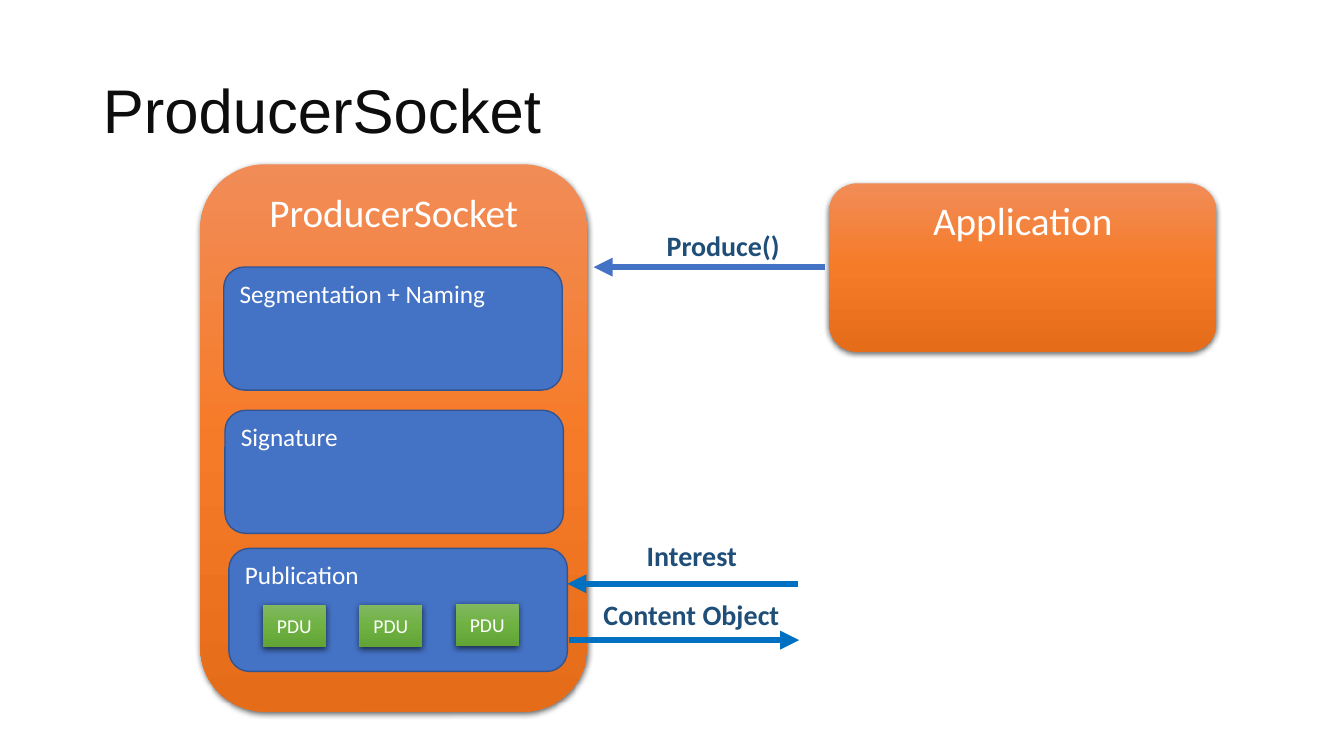
from lxml.etree import SubElement as Sub
from pptx import Presentation
from pptx.dml.color import RGBColor as RGB
from pptx.enum.shapes import MSO_CONNECTOR as LINK, MSO_SHAPE as SHAPE
from pptx.enum.text import MSO_ANCHOR as ANCHOR, MSO_AUTO_SIZE as FIT, PP_ALIGN as ALIGN
from pptx.oxml.ns import qn
from pptx.util import Cm, Pt

WHITE = RGB(0xFF, 0xFF, 0xFF)
INK = RGB(0x0D, 0x0D, 0x0D)
NAVY = RGB(0x1F, 0x4E, 0x79)
BLUE = RGB(0x44, 0x72, 0xC4)
EDGE = RGB(0x32, 0x54, 0x91)
SKY = RGB(0x00, 0x70, 0xC0)
BLACK = RGB(0x00, 0x00, 0x00)
ORANGE = (RGB(0xF1, 0x8C, 0x57), RGB(0xF6, 0x7B, 0x28), RGB(0xE5, 0x6C, 0x19))
GREEN = (RGB(0x81, 0xB8, 0x61), RGB(0x6F, 0xB2, 0x42), RGB(0x62, 0xA3, 0x36))


def write(frame, text, size, color, align=ALIGN.CENTER, bold=False, face="Calibri"):
    para = frame.paragraphs[0]
    para.alignment = align
    run = para.add_run()
    run.text = text
    font = run.font
    font.name, font.size, font.bold = face, Pt(size), bold
    font.color.rgb = color
    return para


def add_title(slide, text):
    title = slide.shapes.title
    title.left, title.top, title.width, title.height = Cm(2.34), Cm(1.02), Cm(26.29), Cm(3.68)
    frame = title.text_frame
    frame.auto_size = FIT.NONE
    frame.vertical_anchor = ANCHOR.MIDDLE
    write(frame, text, 44, INK, ALIGN.LEFT, face="Arial").line_spacing = 0.9


def add_box(slide, kind, x, y, wide, high, text, size, align, anchor):
    box = slide.shapes.add_shape(kind, Cm(x), Cm(y), Cm(wide), Cm(high))
    box.shadow.inherit = False
    frame = box.text_frame
    frame.word_wrap = True
    frame.vertical_anchor = anchor
    write(frame, text, size, WHITE, align)
    return box


def add_glow(box, tints):
    box.line.fill.background()
    box.fill.gradient()
    grad = box._element.spPr.find(qn("a:gradFill"))
    for child in list(grad):
        grad.remove(child)
    stops = Sub(grad, qn("a:gsLst"))
    for i, tint in enumerate(tints):
        stop = Sub(stops, qn("a:gs"), pos=str(i * 50000))
        Sub(stop, qn("a:srgbClr"), val=str(tint))
    Sub(grad, qn("a:lin"), ang="5400000", scaled="0")
    effect = box._element.spPr.find(qn("a:effectLst"))
    shade = Sub(effect, qn("a:outerShdw"), blurRad=str(Pt(4.5)), dist=str(Pt(1.5)),
                dir="5400000", algn="ctr", rotWithShape="0")
    tone = Sub(shade, qn("a:srgbClr"), val=str(BLACK))
    Sub(tone, qn("a:alpha"), val="63000")


def add_block(slide, x, y, high, text):
    box = add_box(slide, SHAPE.ROUNDED_RECTANGLE, x, y, 9.75, high, text, 28,
                  ALIGN.CENTER, ANCHOR.TOP)
    add_glow(box, ORANGE)


def add_stage(slide, x, y, text):
    box = add_box(slide, SHAPE.ROUNDED_RECTANGLE, x, y, 8.53, 3.1, text, 18,
                  ALIGN.LEFT, ANCHOR.TOP)
    box.fill.solid()
    box.fill.fore_color.rgb = BLUE
    box.line.color.rgb = EDGE
    box.line.width = Pt(1)


def add_unit(slide, x, y):
    box = add_box(slide, SHAPE.RECTANGLE, x, y, 1.58, 1.07, "PDU", 14,
                  ALIGN.CENTER, ANCHOR.MIDDLE)
    add_glow(box, GREEN)


def add_arrow(slide, start, end, y, color):
    link = slide.shapes.add_connector(LINK.STRAIGHT, Cm(start), Cm(y), Cm(end), Cm(y))
    link.line.color.rgb = color
    link.line.width = Pt(4.5)
    Sub(link.line._get_or_add_ln(), qn("a:tailEnd"), type="triangle")
    Sub(link._element.spPr, qn("a:effectLst"))


def add_label(slide, x, y, wide, text):
    box = slide.shapes.add_textbox(Cm(x), Cm(y), Cm(wide), Cm(1.11))
    frame = box.text_frame
    frame.word_wrap = True
    frame.auto_size = FIT.SHAPE_TO_FIT_TEXT
    write(frame, text, 20, NAVY, bold=True)


def main():
    deck = Presentation()
    deck.slide_width, deck.slide_height = Cm(33.87), Cm(19.05)
    slide = deck.slides.add_slide(deck.slide_layouts[5])
    add_title(slide, "ProducerSocket")

    add_block(slide, 20.9, 4.62, 4.24, "Application")
    add_block(slide, 5.05, 4.14, 13.79, "ProducerSocket")

    for x, y, text in (
        (5.64, 6.73, "Segmentation + Naming"),
        (5.67, 10.34, "Signature"),
        (5.77, 13.82, "Publication"),
    ):
        add_stage(slide, x, y, text)

    for i, y in enumerate((15.24, 15.24, 15.21)):
        add_unit(slide, 6.63 + i * 2.43, y)

    for start, end, y, color in (
        (20.78, 14.96, 6.73, BLUE),
        (20.12, 14.3, 14.71, SKY),
        (14.33, 20.14, 16.13, SKY),
    ):
        add_arrow(slide, start, end, y, color)

    for x, y, wide, text in (
        (16.08, 5.64, 4.29, "Produce()"),
        (15.29, 13.44, 4.29, "Interest"),
        (14.91, 14.94, 5.03, "Content Object"),
    ):
        add_label(slide, x, y, wide, text)

    deck.save("out.pptx")


if __name__ == "__main__":
    main()
